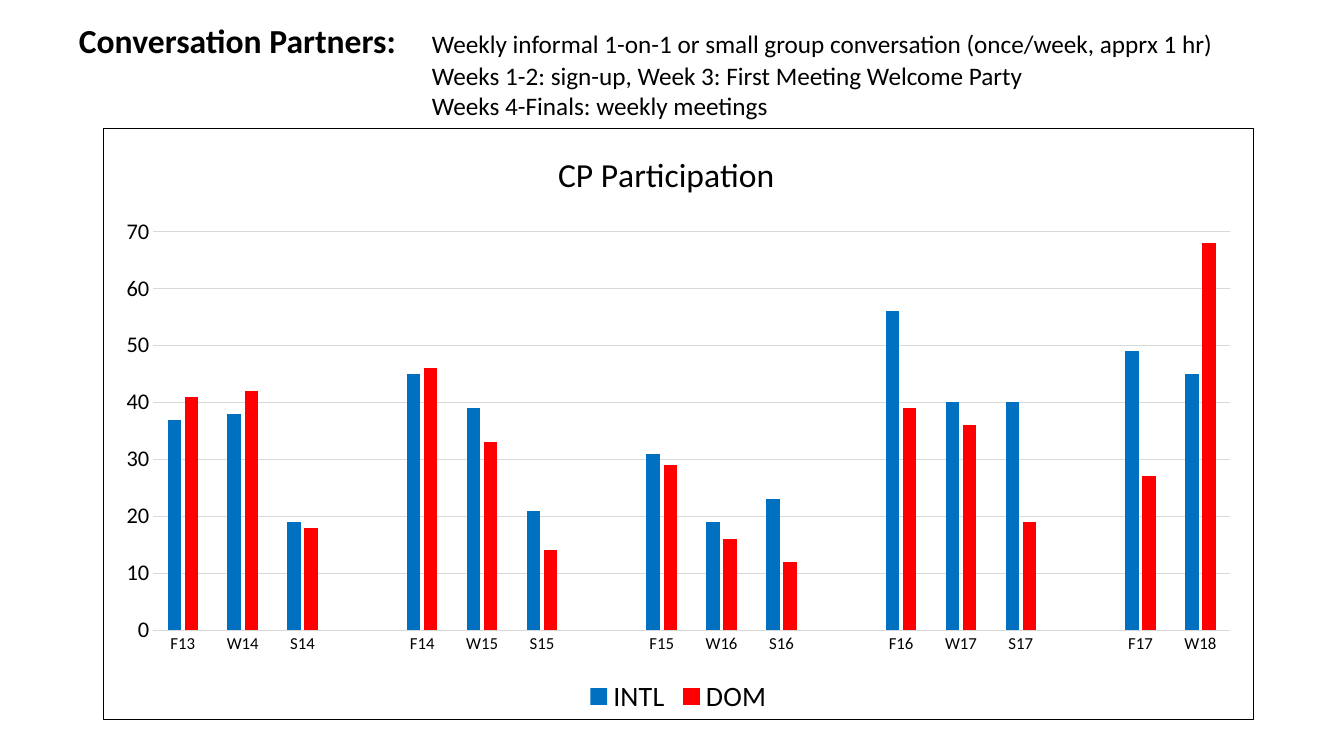
from lxml import etree
from pptx import Presentation
from pptx.chart.data import CategoryChartData
from pptx.dml.color import RGBColor
from pptx.enum.chart import XL_CHART_TYPE, XL_LEGEND_POSITION, XL_TICK_MARK
from pptx.enum.text import MSO_AUTO_SIZE
from pptx.oxml import parse_xml
from pptx.oxml.ns import nsdecls, qn
from pptx.util import Pt

CLUSTERED = XL_CHART_TYPE.COLUMN_CLUSTERED
LEGEND_BOTTOM = XL_LEGEND_POSITION.BOTTOM
NO_TICK = XL_TICK_MARK.NONE
GROW = MSO_AUTO_SIZE.SHAPE_TO_FIT_TEXT

EMU_PER_PX = 914400 / 100.8
SLIDE_SIZE = (1344, 756)
HEADER_BOX = (69, 15, 1205, 112)
CHART_BOX = (103, 128, 1151, 592)
TAB_STOP = 353

THEME = {
    "font": "Calibri",
    "text": RGBColor(0, 0, 0),
    "grid": RGBColor(0xD9, 0xD9, 0xD9),
    "intl": RGBColor(0x00, 0x70, 0xC0),
    "dom": RGBColor(0xFF, 0x00, 0x00),
    "heading": Pt(24),
    "body": Pt(18),
    "legend": Pt(20),
    "values": Pt(16),
    "terms": Pt(12),
    "chart": Pt(10),
    "hairline": Pt(0.75),
}

HEADING = "Conversation Partners: "
DETAILS = [
    "Weekly informal 1-on-1 or small group conversation (once/week, apprx 1 hr)",
    "Weeks 1-2: sign-up, Week 3: First Meeting Welcome Party",
    "Weeks 4-Finals: weekly meetings",
]
TERMS = ["F13", "W14", "S14", "", "F14", "W15", "S15", "", "F15", "W16", "S16", "",
         "F16", "W17", "S17", "", "F17", "W18"]
PARTICIPANTS = {
    "INTL": (THEME["intl"], [37, 38, 19, None, 45, 39, 21, None, 31, 19, 23, None,
                             56, 40, 40, None, 49, 45]),
    "DOM": (THEME["dom"], [41, 42, 18, None, 46, 33, 14, None, 29, 16, 12, None,
                           39, 36, 19, None, 27, 68]),
}


def px(length):
    return round(length * EMU_PER_PX)


def apply_format(target, values):
    for attribute, value in values.items():
        setattr(target, attribute, value)


def style_font(font, size, bold=False):
    apply_format(font, {"name": THEME["font"], "size": THEME[size], "bold": bold})
    font.color.rgb = THEME["text"]


def style_line(line, colour):
    line.color.rgb = THEME[colour]
    line.width = THEME["hairline"]


def manual_layout(fractions, inner=False):
    """Layout element placing a chart part at fractions of the chart."""
    layout = etree.Element(qn("c:layout"))
    manual = etree.SubElement(layout, qn("c:manualLayout"))
    settings = {"layoutTarget": "inner"} if inner else {}
    settings.update({"xMode": "edge", "yMode": "edge"})
    settings.update(zip("xywh", fractions))
    for tag, value in settings.items():
        etree.SubElement(manual, qn(f"c:{tag}"), val=str(value))
    return layout


def drop_layout(part):
    for layout in part.findall(qn("c:layout")):
        part.remove(layout)


def add_header(slide, box):
    frame = slide.shapes.add_textbox(*map(px, box)).text_frame
    apply_format(frame, {"word_wrap": True, "auto_size": GROW})
    for index, detail in enumerate(DETAILS):
        line = frame.add_paragraph() if index else frame.paragraphs[0]
        tabs = etree.SubElement(line._p.get_or_add_pPr(), qn("a:tabLst"))
        etree.SubElement(tabs, qn("a:tab"), pos=str(px(TAB_STOP)), algn="l")
        if index == 0:
            heading = line.add_run()
            heading.text = HEADING + "\t"
            style_font(heading.font, "heading", bold=True)
        body = line.add_run()
        body.text = detail if index == 0 else "\t" + detail
        style_font(body.font, "body")


def add_participation_chart(slide, box):
    data = CategoryChartData()
    data.categories = TERMS
    for group, (_, counts) in PARTICIPANTS.items():
        data.add_series(group, counts)
    chart = slide.shapes.add_chart(CLUSTERED, *map(px, box), data).chart
    style_font(chart.font, "chart")

    # Title
    chart.has_title = True
    title = chart.chart_title
    title.include_in_layout = False
    title.text_frame.text = "CP Participation"
    style_font(title.text_frame.paragraphs[0].runs[0].font, "heading")
    drop_layout(title._element)
    title._element.find(qn("c:tx")).addnext(manual_layout((0.39, 0.03)))

    # Columns
    columns = chart.plots[0]
    apply_format(columns, {"gap_width": 219, "overlap": -27, "vary_by_categories": False})
    for series in columns.series:
        series.format.fill.solid()
        series.format.fill.fore_color.rgb = PARTICIPANTS[series.name][0]
        series.invert_if_negative = False

    # Axes
    no_ticks = {"major_tick_mark": NO_TICK, "minor_tick_mark": NO_TICK}
    term_axis, count_axis = chart.category_axis, chart.value_axis
    apply_format(term_axis, no_ticks)
    style_font(term_axis.tick_labels.font, "terms")
    style_line(term_axis.format.line, "grid")
    apply_format(count_axis, {**no_ticks, "minimum_scale": 0, "maximum_scale": 70,
                              "major_unit": 10, "has_major_gridlines": True})
    style_font(count_axis.tick_labels.font, "values")
    count_axis.format.line.fill.background()
    style_line(count_axis.major_gridlines.format.line, "grid")

    # Legend
    chart.has_legend = True
    apply_format(chart.legend, {"position": LEGEND_BOTTOM, "include_in_layout": False})
    style_font(chart.legend.font, "legend")

    # Plot position and outer border
    space = chart._chartSpace
    plot_area = space.chart.plotArea
    drop_layout(plot_area)
    plot_area.insert(0, manual_layout((0.043, 0.175, 0.937, 0.674), inner=True))
    space.chart.addnext(parse_xml(
        f'<c:spPr {nsdecls("c", "a")}><a:solidFill><a:srgbClr val="FFFFFF"/></a:solidFill>'
        f'<a:ln w="{THEME["hairline"]}"><a:solidFill><a:srgbClr val="{THEME["text"]}"/>'
        '</a:solidFill></a:ln></c:spPr>'))


def main():
    deck = Presentation()
    deck.slide_width, deck.slide_height = map(px, SLIDE_SIZE)
    slide = deck.slides.add_slide(deck.slide_layouts[6])
    add_header(slide, HEADER_BOX)
    add_participation_chart(slide, CHART_BOX)
    deck.save("out.pptx")


if __name__ == "__main__":
    main()
